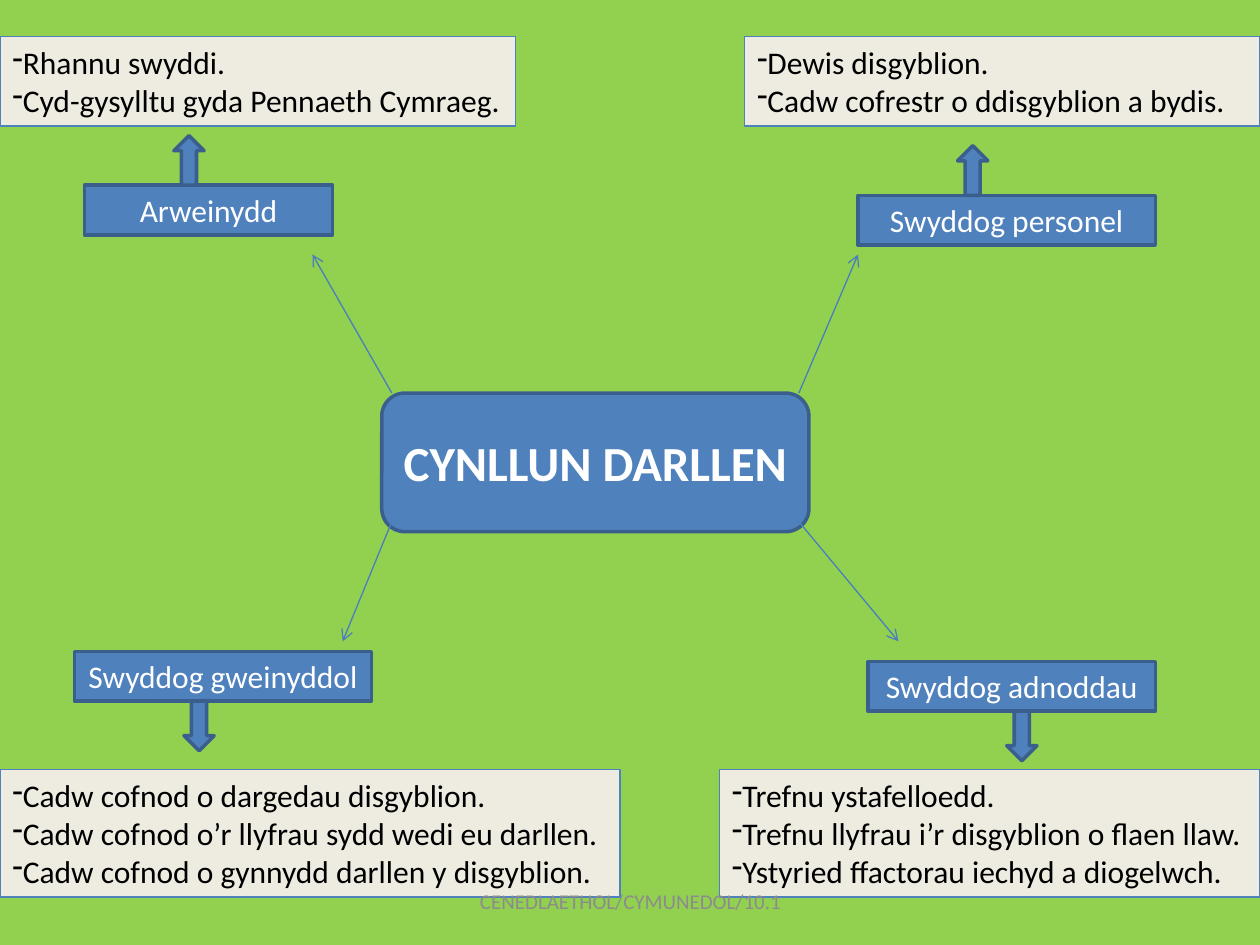
import dataclasses

import pptx
import pptx.dml.color
import pptx.enum.shapes
import pptx.enum.text
import pptx.oxml.ns
import pptx.util
from lxml import etree

SHAPES = pptx.enum.shapes.MSO_SHAPE
ALIGN = pptx.enum.text.PP_ALIGN
ANCHOR = pptx.enum.text.MSO_ANCHOR
COLUMNS, ROWS = 100, 75  # square grid cells of a tenth of an inch


@dataclasses.dataclass(frozen=True)
class Theme:
    font: str = "Calibri"
    background: str = "92D050"
    accent: str = "4F81BD"
    accent_edge: str = "3A5F8C"
    spoke: str = "4B7EBC"
    note: str = "EEECE1"
    light_text: str = "FFFFFF"
    dark_text: str = "000000"
    footer_text: str = "8C8C8C"
    title_size: int = 28
    body_size: int = 18
    footer_size: int = 12
    thick: float = 2
    thin: float = 0.75


THEME = Theme()


@dataclasses.dataclass(frozen=True)
class Role:
    """A role with its duties in one corner of the plan."""
    name: str
    left: float
    top: float
    width: float
    arrow_left: float
    duties_width: float
    duties: tuple
    spoke: tuple  # start column, start row, end column, end row

    @property
    def is_upper(self):
        return self.top < ROWS / 2

    @property
    def is_right(self):
        return self.left > COLUMNS / 2


ROLES = (
    Role("Arweinydd", 6.7, 14.7, 19.7, 13.8, 40.9,
         ("Rhannu swyddi.", "Cyd-gysylltu gyda Pennaeth Cymraeg."),
         (31.1, 31.2, 24.8, 20.2)),
    Role("Swyddog personel", 68.1, 15.5, 23.6, 76, 40.9,
         ("Dewis disgyblion.", "Cadw cofrestr o ddisgyblion a bydis."),
         (63.4, 31.2, 68.1, 20.2)),
    Role("Swyddog adnoddau", 68.9, 52.5, 22.8, 79.9, 42.9,
         ("Trefnu ystafelloedd.", "Trefnu llyfrau i’r disgyblion o flaen llaw.",
          "Ystyried ffactorau iechyd a diogelwch."),
         (63.4, 41.4, 71.3, 50.9)),
    Role("Swyddog gweinyddol", 5.9, 51.7, 23.6, 14.6, 49.2,
         ("Cadw cofnod o dargedau disgyblion.",
          "Cadw cofnod o’r llyfrau sydd wedi eu darllen.",
          "Cadw cofnod o gynnydd darllen y disgyblion."),
         (31.1, 41.4, 27.2, 50.9)),
)
ROLE_HEIGHT = ARROW_HEIGHT = 3.94
ARROW_WIDTH = 2.4


def grid(*cells):
    return [pptx.util.Inches(cell / 10) for cell in cells]


def color(value):
    return pptx.dml.color.RGBColor.from_string(value)


def add_block(slide, kind, area, fill, edge, edge_width):
    block = slide.shapes.add_shape(kind, *grid(*area))
    block.shadow.inherit = False
    block.fill.solid()
    block.fill.fore_color.rgb = color(fill)
    block.line.color.rgb = color(edge)
    block.line.width = pptx.util.Pt(edge_width)
    return block


def write(block, lines, size, text_color, align=ALIGN.CENTER,
          anchor=ANCHOR.MIDDLE, bold=False):
    frame = block.text_frame
    frame.word_wrap = True
    frame.vertical_anchor = anchor
    frame.text = "\n".join(lines)
    for paragraph in frame.paragraphs:
        paragraph.alignment = align
        paragraph.font.name = THEME.font
        paragraph.font.size = pptx.util.Pt(size)
        paragraph.font.bold = bold
        paragraph.font.color.rgb = color(text_color)


def add_dash_bullets(frame):
    for paragraph in frame.paragraphs:
        properties = paragraph._p.get_or_add_pPr()
        bullet = etree.Element(pptx.oxml.ns.qn("a:buChar"), char="-")
        default_run = properties.find(pptx.oxml.ns.qn("a:defRPr"))
        if default_run is None:
            properties.append(bullet)
        else:
            default_run.addprevious(bullet)


def add_accent(slide, kind, area):
    return add_block(slide, kind, area, THEME.accent, THEME.accent_edge, THEME.thick)


def add_duties(slide, role):
    height = 3 * len(role.duties) + 1.1
    left = COLUMNS - role.duties_width if role.is_right else 0
    top = 2.9 if role.is_upper else 61.1
    note = add_block(slide, SHAPES.RECTANGLE, (left, top, role.duties_width, height),
                     THEME.note, THEME.accent, THEME.thin)
    write(note, role.duties, THEME.body_size, THEME.dark_text,
          ALIGN.LEFT, ANCHOR.TOP)
    add_dash_bullets(note.text_frame)
    note.text_frame.auto_size = pptx.enum.text.MSO_AUTO_SIZE.SHAPE_TO_FIT_TEXT


def add_spoke(slide, ends):
    spoke = slide.shapes.add_connector(
        pptx.enum.shapes.MSO_CONNECTOR.STRAIGHT, *grid(*ends))
    spoke.line.color.rgb = color(THEME.spoke)
    spoke.line.width = pptx.util.Pt(THEME.thin)
    etree.SubElement(spoke.line._get_or_add_ln(),
                     pptx.oxml.ns.qn("a:tailEnd"), type="arrow")
    etree.SubElement(spoke._element.spPr, pptx.oxml.ns.qn("a:effectLst"))


def add_role(slide, role):
    label = add_accent(slide, SHAPES.RECTANGLE,
                       (role.left, role.top, role.width, ROLE_HEIGHT))
    write(label, [role.name], THEME.body_size, THEME.light_text)
    add_spoke(slide, role.spoke)
    add_duties(slide, role)
    if role.is_upper:
        direction, arrow_top = SHAPES.UP_ARROW, role.top - ARROW_HEIGHT
    else:
        direction, arrow_top = SHAPES.DOWN_ARROW, role.top + ROLE_HEIGHT
    add_accent(slide, direction,
               (role.arrow_left, arrow_top, ARROW_WIDTH, ARROW_HEIGHT))


def add_footer(slide, text):
    footer = slide.shapes.add_textbox(*grid(34.2, 69.5, 31.7, 4))
    write(footer, [text], THEME.footer_size, THEME.footer_text)


def main():
    deck = pptx.Presentation()
    deck.slide_width, deck.slide_height = grid(COLUMNS, ROWS)
    slide = deck.slides.add_slide(deck.slide_layouts[6])
    slide.background.fill.solid()
    slide.background.fill.fore_color.rgb = color(THEME.background)

    plan = add_accent(slide, SHAPES.ROUNDED_RECTANGLE, (30.3, 31.2, 33.9, 11))
    write(plan, ["CYNLLUN DARLLEN"], THEME.title_size, THEME.light_text, bold=True)
    for role in ROLES:
        add_role(slide, role)
    add_footer(slide, "CENEDLAETHOL/CYMUNEDOL/10.1")
    deck.save("out.pptx")


if __name__ == "__main__":
    main()
